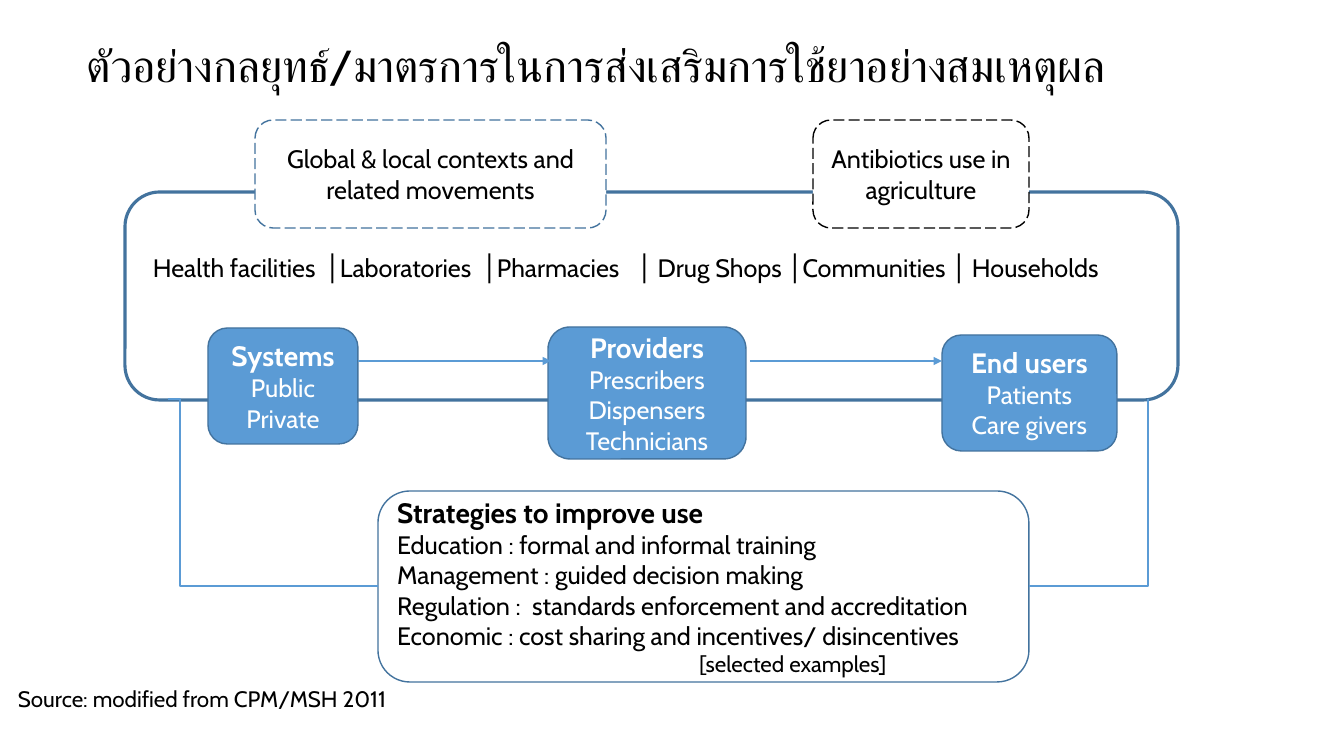
from dataclasses import dataclass

from lxml import etree
from pptx import Presentation
from pptx.dml.color import RGBColor
from pptx.enum.dml import MSO_LINE_DASH_STYLE as Dash
from pptx.enum.shapes import MSO_CONNECTOR as Connector, MSO_SHAPE as Shape
from pptx.enum.text import MSO_ANCHOR as Anchor, PP_ALIGN as Align
from pptx.oxml.ns import qn
from pptx.util import Emu, Pt


@dataclass(frozen=True)
class Theme:
    font: str = "Cabin"
    black: str = "000000"
    white: str = "FFFFFF"
    blue: str = "5B9BD5"
    outline: str = "43739E"
    title: int = 32
    heading: int = 20
    body: int = 18
    small: int = 16


THEME = Theme()

# Content: boxes are (left, top, width, height) in px
SLIDE_SIZE = (1344, 756)
TITLE = ("ตัวอย่างกลยุทธ์/มาตรการในการส่งเสริมการใช้ยาอย่างสมเหตุผล", (77, 23, 1207, 89))
FRAME = (125, 192, 1053, 208)
SETTINGS = (
    "Health facilities\t│Laboratories\t│Pharmacies\t│ Drug Shops │Communities │ Households",
    (143, 247, 1035, 40),
)
SETTING_TABS = (172, 329, 484)
ACTORS = [
    ("Systems", ["Public", "Private"], (208, 328, 150, 116)),
    ("Providers", ["Prescribers", "Dispensers", "Technicians"], (548, 327, 198, 132)),
    ("End users", ["Patients", "Care givers"], (942, 335, 175, 116)),
]
ARROWS = [((358, 361), (551, 361)), ((750, 361), (942, 361))]
STRATEGIES = (
    "Strategies to improve use",
    [
        "Education : formal and informal training",
        "Management : guided decision making",
        "Regulation :  standards enforcement and accreditation",
        "Economic : cost sharing and incentives/ disincentives",
    ],
    "[selected examples]",
    (378, 491, 651, 191),
)
EXAMPLES_INDENT = 302
# Start, end, and position of the bend along the width in 1/100000
ELBOWS = [((168, 399), (378, 586), 5700), ((1029, 586), (1148, 399), 100000)]
SOURCE = ("Source: modified from CPM/MSH 2011", (8, 680, 408, 37))
CONTEXTS = [
    ("Global & local contexts and related movements", (255, 120, 351, 108), THEME.outline),
    ("Antibiotics use in agriculture", (813, 120, 216, 108), THEME.black),
]


def px(*lengths):
    return [Emu(round(length * 914400 / 100.8)) for length in lengths]


def color(value):
    return RGBColor.from_string(value)


def write(shape, lines, ink=THEME.black, align=Align.LEFT, anchor=Anchor.MIDDLE):
    """Fill the shape with (text, size, bold) lines and return the paragraphs."""
    frame = shape.text_frame
    frame.word_wrap = True
    frame.vertical_anchor = anchor
    for index, (text, size, bold) in enumerate(lines):
        paragraph = frame.add_paragraph() if index else frame.paragraphs[0]
        paragraph.text = text
        paragraph.alignment = align
        paragraph.font.name = THEME.font
        paragraph.font.size = Pt(size)
        paragraph.font.bold = bold
        paragraph.font.color.rgb = color(ink)
    return frame.paragraphs


def add_text(slide, text, box, size, anchor=Anchor.TOP):
    textbox = slide.shapes.add_textbox(*px(*box))
    return write(textbox, [(text, size, False)], anchor=anchor)[0]


def add_box(slide, box, fill=None, line=THEME.outline, width=1, dash=None):
    shape = slide.shapes.add_shape(Shape.ROUNDED_RECTANGLE, *px(*box))
    shape.shadow.inherit = False
    if fill:
        shape.fill.solid()
        shape.fill.fore_color.rgb = color(fill)
    else:
        shape.fill.background()
    shape.line.color.rgb = color(line)
    shape.line.width = Pt(width)
    if dash:
        shape.line.dash_style = dash
    return shape


def add_line(slide, kind, start, end, width):
    connector = slide.shapes.add_connector(kind, *px(*start, *end))
    connector.line.color.rgb = color(THEME.blue)
    connector.line.width = Pt(width)
    etree.SubElement(connector.element.spPr, qn("a:effectLst"))
    return connector


def main():
    presentation = Presentation()
    presentation.slide_width, presentation.slide_height = px(*SLIDE_SIZE)
    slide = presentation.slides.add_slide(presentation.slide_layouts[6])

    # Frame, title and care settings
    add_box(slide, FRAME, width=2.25)
    add_text(slide, *TITLE, THEME.title, Anchor.MIDDLE).line_spacing = 0.9
    settings = add_text(slide, *SETTINGS, THEME.body)
    tabs = etree.Element(qn("a:tabLst"))
    for position in px(*SETTING_TABS):
        etree.SubElement(tabs, qn("a:tab"), pos=str(position), algn="l")
    settings.font  # the tab list goes before the default run properties
    settings._p.pPr.insert(0, tabs)

    # Actors and the arrows between them
    for name, members, box in ACTORS:
        lines = [(name, THEME.heading, True)]
        lines += [(member, THEME.body, False) for member in members]
        write(add_box(slide, box, THEME.blue), lines, THEME.white, Align.CENTER)
    for start, end in ARROWS:
        arrow = add_line(slide, Connector.STRAIGHT, start, end, 2)
        etree.SubElement(arrow.line._get_or_add_ln(), qn("a:tailEnd"), type="triangle")

    # Strategies
    heading, measures, note, box = STRATEGIES
    lines = [(heading, THEME.heading, True)]
    lines += [(measure, THEME.body, False) for measure in measures]
    lines.append((note, THEME.small, False))
    paragraphs = write(add_box(slide, box), lines)
    paragraphs[-1]._p.get_or_add_pPr().set("marL", str(px(EXAMPLES_INDENT)[0]))

    # Elbows from the frame to the strategies
    for start, end, bend in ELBOWS:
        elbow = add_line(slide, Connector.ELBOW, start, end, 1.5)
        guides = elbow.element.spPr.find(qn("a:prstGeom")).find(qn("a:avLst"))
        etree.SubElement(guides, qn("a:gd"), name="adj1", fmla=f"val {bend}")

    # Source and surrounding contexts
    add_text(slide, *SOURCE, THEME.small)
    for text, box, line in CONTEXTS:
        context = add_box(slide, box, THEME.white, line, dash=Dash.LONG_DASH)
        write(context, [(text, THEME.body, False)], align=Align.CENTER)

    presentation.save("out.pptx")


if __name__ == "__main__":
    main()
